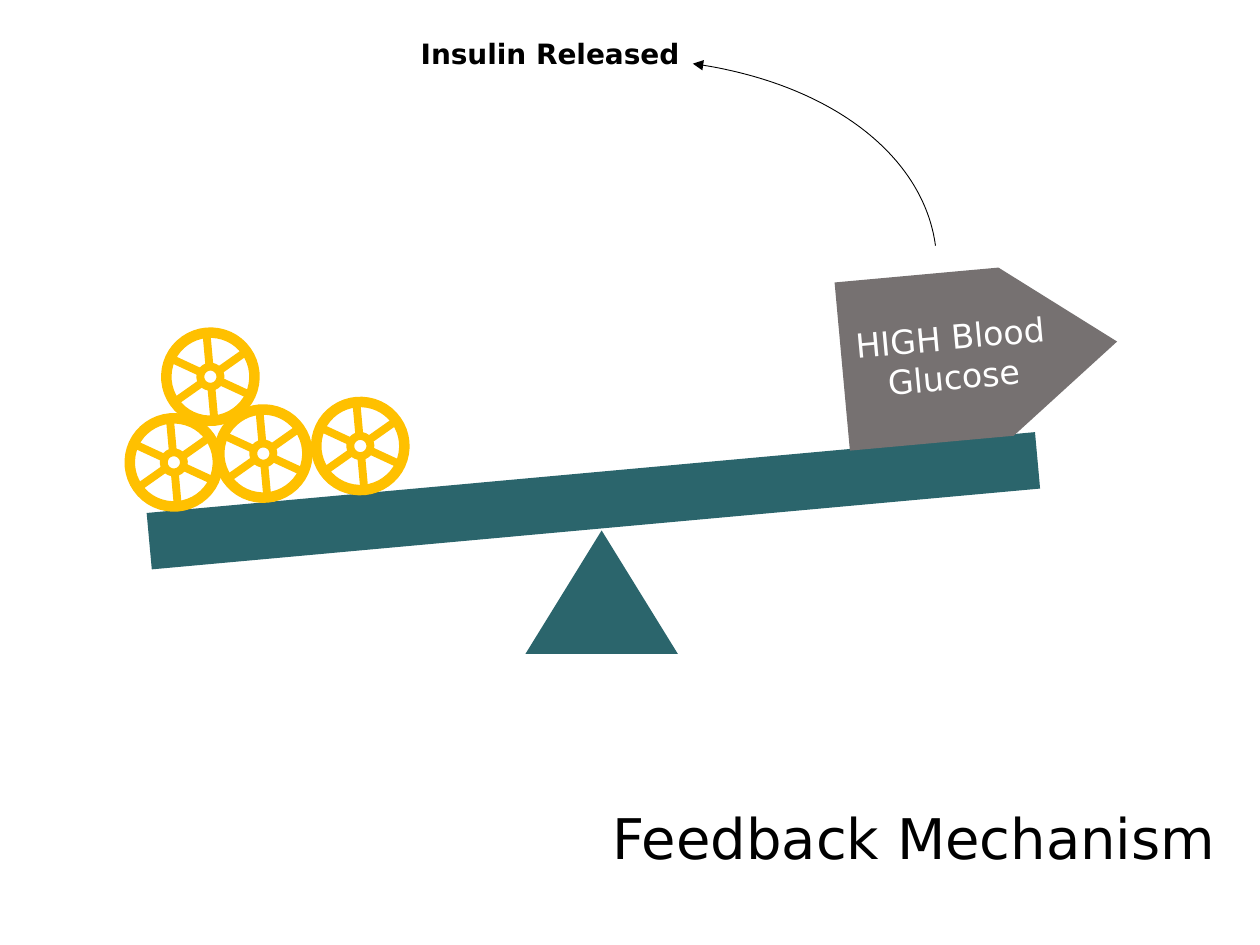
from math import cos, radians, sin

from pptx import Presentation
from pptx.dml.color import RGBColor
from pptx.enum.shapes import MSO_CONNECTOR as CONNECTOR, MSO_SHAPE as SHAPE
from pptx.enum.text import MSO_ANCHOR as ANCHOR, MSO_AUTO_SIZE as AUTO_SIZE, PP_ALIGN as ALIGN
from pptx.oxml.ns import qn
from pptx.util import Inches, Pt
from lxml.etree import SubElement

COLORS = {"teal": "2B656C", "gray": "767171", "gold": "FFC000", "white": "FFFFFF", "black": "000000"}
FONT = "DejaVu Sans"
TILT = -5.2


def add_figure(parent, kind, box, fill=None, line=None, width=0, rotation=0):
    """Add a preset shape; without a fill or line colour that part is not drawn."""
    figure = parent.shapes.add_shape(kind, *map(Inches, box))
    figure.shadow.inherit = False
    figure.rotation = rotation
    if fill:
        figure.fill.solid()
        figure.fill.fore_color.rgb = RGBColor.from_string(COLORS[fill])
    else:
        figure.fill.background()
    if line:
        figure.line.color.rgb = RGBColor.from_string(COLORS[line])
        figure.line.width = Pt(width)
    else:
        figure.line.fill.background()
    return figure


def write(frame, words, size, color, align, bold=False):
    frame.word_wrap = True
    frame.text = words
    paragraph = frame.paragraphs[0]
    paragraph.alignment = align
    font = paragraph.runs[0].font
    font.name, font.size, font.bold = FONT, Pt(size), bold
    font.color.rgb = RGBColor.from_string(COLORS[color])


prs = Presentation()
prs.slide_width, prs.slide_height = Inches(10), Inches(7.5)
slide = prs.slides.add_slide(prs.slide_layouts[6])

# Seesaw with its load
seesaw = slide.shapes.add_group_shape()
add_figure(seesaw, SHAPE.RECTANGLE, (1.17, 3.75, 7.08, 0.45), "teal", rotation=TILT)
add_figure(seesaw, SHAPE.ISOSCELES_TRIANGLE, (4.17, 4.21, 1.21, 0.98), "teal")
glucose = add_figure(seesaw, SHAPE.PENTAGON, (6.68, 2.14, 2.19, 1.34), "gray", rotation=TILT)
glucose.adjustments[0] = 0.66
glucose.text_frame.vertical_anchor = ANCHOR.MIDDLE
write(glucose.text_frame, "HIGH Blood Glucose", 19, "white", ALIGN.CENTER)

# Wheels: three spokes 60 degrees apart, a rim and a hub
loose_wheel = slide.shapes.add_group_shape()
RIM, HUB = 0.35, 0.08
wheels = [(seesaw, 1.67, 2.99), (seesaw, 2.09, 3.6), (seesaw, 1.38, 3.67), (loose_wheel, 2.86, 3.54)]
for group, x, y in wheels:
    for turn in (-60, 0, 60):
        angle = radians(90 + TILT + turn)
        dx, dy = RIM * cos(angle), RIM * sin(angle)
        spoke = group.shapes.add_connector(
            CONNECTOR.STRAIGHT, Inches(x - dx), Inches(y - dy), Inches(x + dx), Inches(y + dy))
        spoke.line.color.rgb = RGBColor.from_string(COLORS["gold"])
        spoke.line.width = Pt(4.5)
        SubElement(spoke._element.spPr, qn("a:effectLst"))
    for radius, fill, width in ((RIM, None, 6), (HUB, "white", 4.5)):
        box = (x - radius, y - radius, 2 * radius, 2 * radius)
        add_figure(group, SHAPE.OVAL, box, fill, "gold", width, TILT)

# Title, curved arrow and its label
title = slide.shapes.add_textbox(Inches(4.11), Inches(6.33), Inches(5.65), Inches(0.65))
write(title.text_frame, "Feedback Mechanism", 32, "black", ALIGN.RIGHT)
title.text_frame.margin_left = title.text_frame.margin_right = Inches(0.11)

release = add_figure(slide, SHAPE.ARC, (1.78, 0.49, 5.67, 3.67), line="black", width=0.5, rotation=-7.6)
release.adjustments[0], release.adjustments[1] = 182.11, 0
SubElement(release.line._get_or_add_ln(), qn("a:headEnd"), type="triangle")

insulin = slide.shapes.add_textbox(Inches(3.24), Inches(0.24), Inches(2.68), Inches(0.37))
write(insulin.text_frame, "Insulin Released", 16, "black", ALIGN.LEFT, bold=True)
for label in (title, insulin):
    label.text_frame.auto_size = AUTO_SIZE.SHAPE_TO_FIT_TEXT

prs.save("out.pptx")
